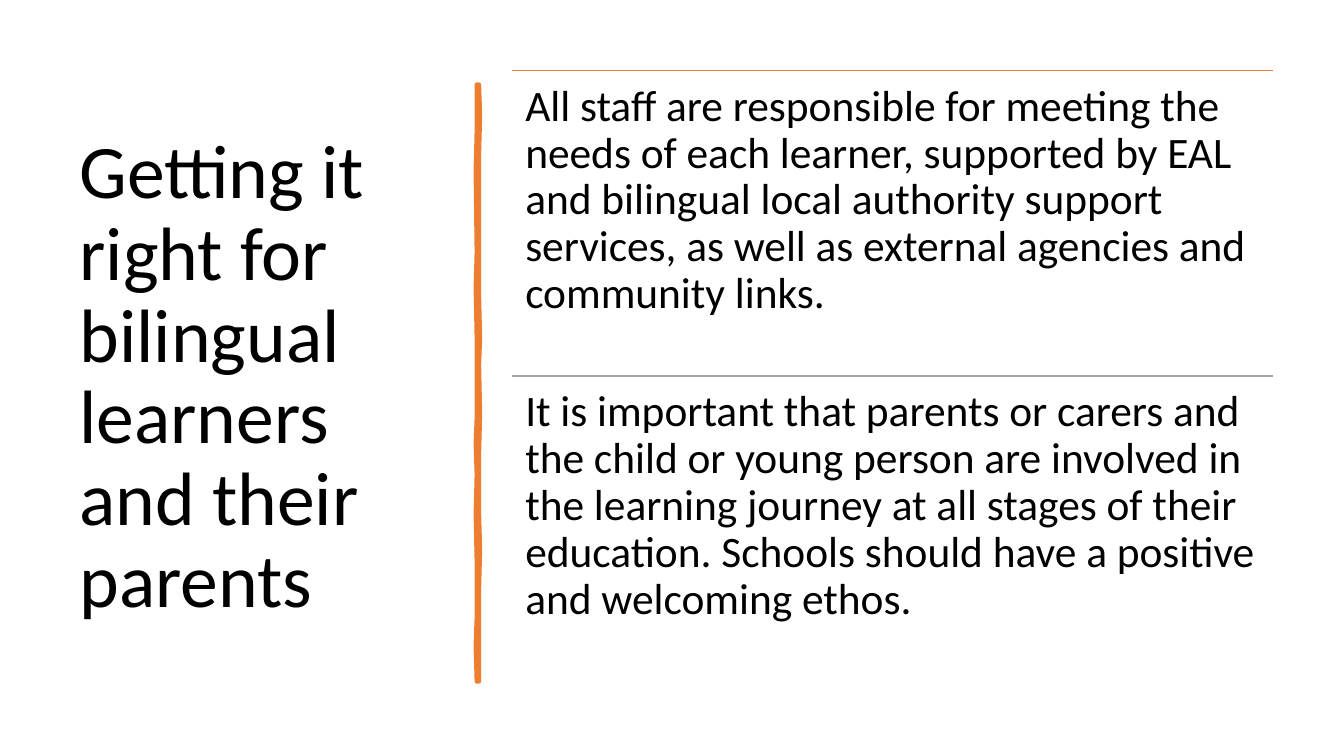
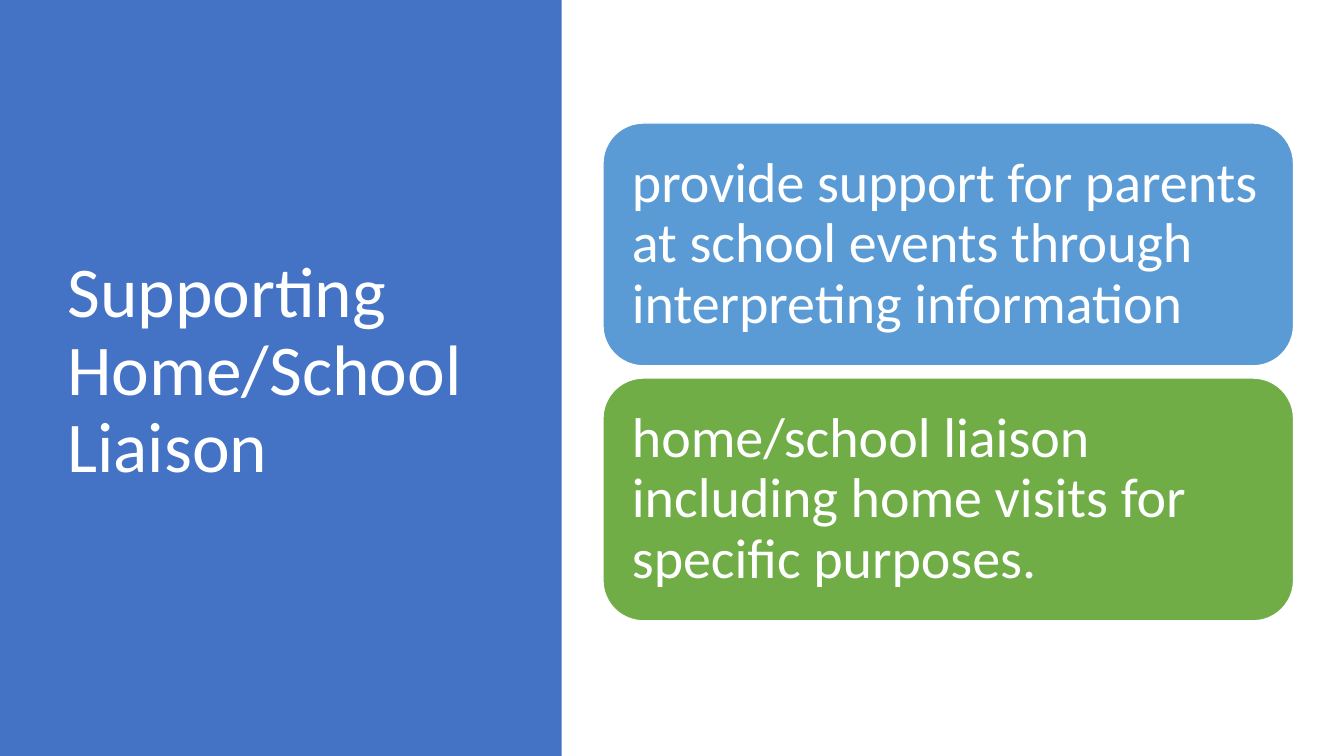
from lxml import etree
from pptx import Presentation
from pptx.dml.color import RGBColor
from pptx.enum.shapes import MSO_CONNECTOR, MSO_SHAPE
from pptx.enum.text import MSO_ANCHOR, PP_ALIGN
from pptx.oxml.ns import qn
from pptx.util import Pt

PX = 9144  # 100 px to the inch
FONT = "Calibri"
BLACK = RGBColor(0x00, 0x00, 0x00)
WHITE = RGBColor(0xFF, 0xFF, 0xFF)
ORANGE = RGBColor(0xED, 0x7D, 0x31)
GREY = RGBColor(0xA5, 0xA5, 0xA5)
NAVY = RGBColor(0x44, 0x72, 0xC4)
BLUE = RGBColor(0x5B, 0x9B, 0xD5)
GREEN = RGBColor(0x70, 0xAD, 0x47)
LEFT = PP_ALIGN.LEFT
TOP, MIDDLE = MSO_ANCHOR.TOP, MSO_ANCHOR.MIDDLE
RECT, ROUNDED = MSO_SHAPE.RECTANGLE, MSO_SHAPE.ROUNDED_RECTANGLE
STRAIGHT = MSO_CONNECTOR.STRAIGHT


def set_text(sp, text, size, color, anchor, inset_x, inset_y):
    tf = sp.text_frame
    tf.word_wrap = True
    tf.vertical_anchor = anchor
    tf.margin_left = tf.margin_right = inset_x * PX
    tf.margin_top = tf.margin_bottom = inset_y * PX
    tf.text = text
    p = tf.paragraphs[0]
    p.alignment = LEFT
    p.line_spacing = 0.9
    font = p.runs[0].font
    font.name, font.size, font.color.rgb = FONT, Pt(size), color


def add_title(s, text, x, y, w, h, size, color):
    sp = s.shapes.add_textbox(x * PX, y * PX, w * PX, h * PX)
    set_text(sp, text, size, color, MIDDLE, 10, 5)


prs = Presentation()
prs.slide_width, prs.slide_height = 1333 * PX, 750 * PX
blank = prs.slide_layouts[6]

# Slide 1: title, hand-drawn divider, ruled paragraphs
s = prs.slides.add_slide(blank)
add_title(s, "Getting it right for bilingual learners and their parents",
          69, 70, 374, 611, 54, BLACK)

right_edge = [(475, 84), (476, 115), (475, 152), (475, 294), (476, 335),
              (475, 362), (476, 410), (475, 450), (475, 510), (476, 545),
              (475, 584), (475, 676)]
left_edge = [(473, 676), (472, 640), (473, 613), (473, 557), (472, 510),
             (473, 471), (472, 440), (473, 415), (473, 335), (472, 285),
             (473, 250), (472, 170), (473, 130), (473, 84)]
outline = right_edge + left_edge
fb = s.shapes.build_freeform(*outline[0], scale=PX)
fb.add_line_segments(outline[1:], close=True)
sp = fb.convert_to_shape()
sp.shadow.inherit = False
sp.fill.solid()
sp.fill.fore_color.rgb = ORANGE
sp.line.color.rgb = ORANGE
sp.line.width = Pt(3.25)

paragraphs = [
    (ORANGE, "All staff are responsible for meeting the needs of each learner, "
             "supported by EAL and bilingual local authority support services, "
             "as well as external agencies and community links."),
    (GREY, "It is important that parents or carers and the child or young "
           "person are involved in the learning journey at all stages of their "
           "education. Schools should have a positive and welcoming ethos."),
]
x, w, h = 508, 755, 303
for i, (color, text) in enumerate(paragraphs):
    y = 70 + i * h
    rule = s.shapes.add_connector(STRAIGHT, x * PX, y * PX, (x + w) * PX, y * PX)
    rule.line.color.rgb = color
    rule.line.width = Pt(1)
    etree.SubElement(rule._element.spPr, qn("a:effectLst"))
    sp = s.shapes.add_textbox(x * PX, y * PX, w * PX, h * PX)
    set_text(sp, text, 31, BLACK, TOP, 13, 13)

# Slide 2: title panel and rounded cards
s = prs.slides.add_slide(blank)
panel = s.shapes.add_shape(RECT, 0, 0, 557 * PX, prs.slide_height)
panel.shadow.inherit = False
panel.fill.solid()
panel.fill.fore_color.rgb = NAVY
panel.line.fill.background()
add_title(s, "Supporting Home/School Liaison", 57, 68, 416, 602, 51, WHITE)

cards = [
    (BLUE, "provide support for parents at school events through "
           "interpreting information"),
    (GREEN, "home/school liaison including home visits for specific purposes."),
]
card_h, gap = 241, 12
for i, (color, text) in enumerate(cards):
    y = 122 + i * (card_h + gap)
    card = s.shapes.add_shape(ROUNDED, 598 * PX, y * PX, 685 * PX, card_h * PX)
    card.shadow.inherit = False
    card.fill.solid()
    card.fill.fore_color.rgb = color
    card.line.color.rgb = WHITE
    card.line.width = Pt(1)
    set_text(card, text, 40, WHITE, MIDDLE, 17, 17)

prs.save("out.pptx")
